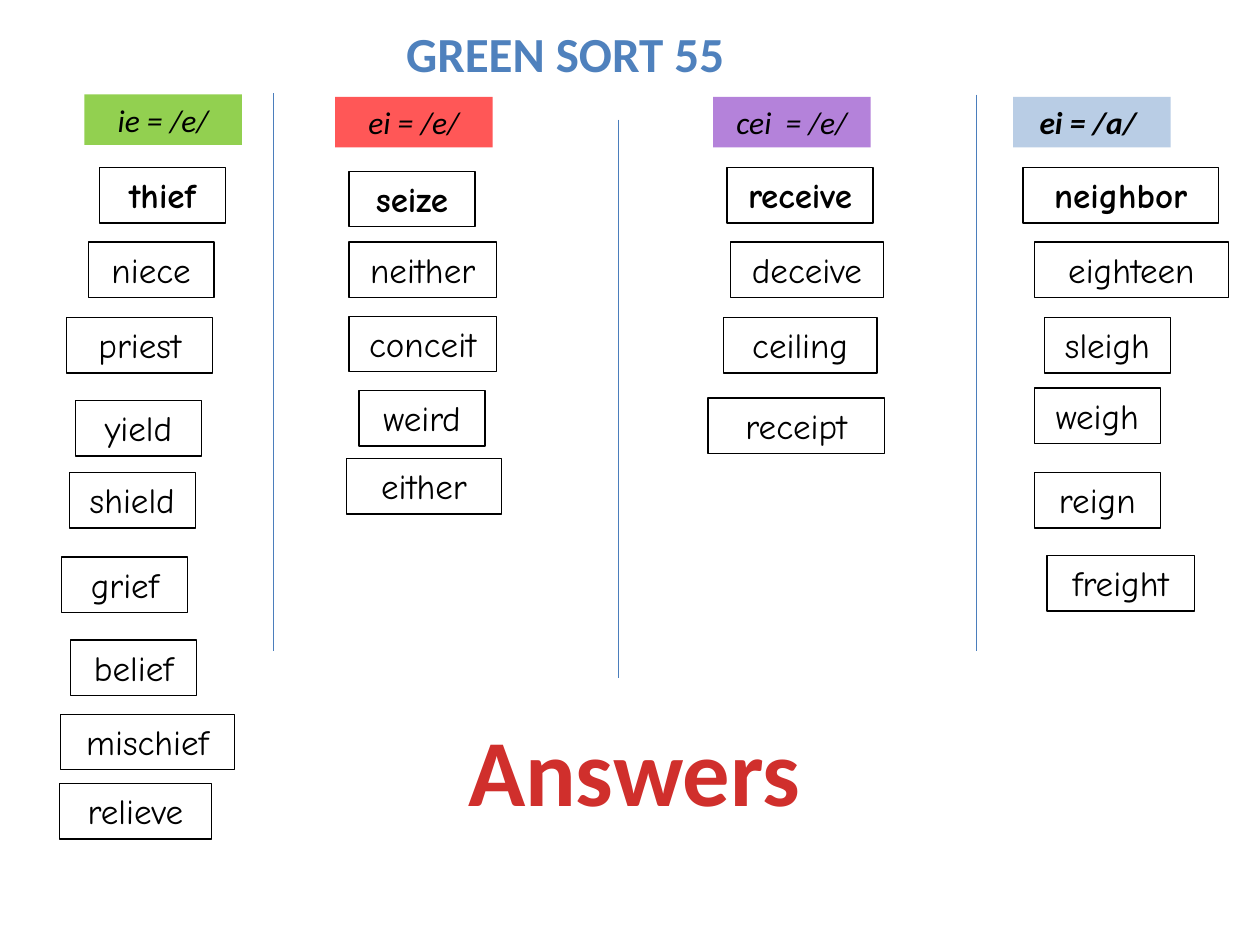
from lxml import etree
from pptx import Presentation
from pptx.dml.color import RGBColor
from pptx.enum import shapes, text
from pptx.oxml.ns import qn
from pptx.util import Inches, Pt

CARD_HEIGHT = 0.44
HEADER_SIZE = (1.25, 0.4)

# Header: label, left, top, fill; words: word, left, top, width
COLUMNS = [
    (("ie = /e/", 0.67, 0.75, "92D050"), [
        ("thief", 0.79, 1.33, 1), ("niece", 0.7, 1.92, 1),
        ("priest", 0.53, 2.52, 1.16), ("yield", 0.6, 3.18, 1),
        ("shield", 0.55, 3.75, 1), ("grief", 0.49, 4.42, 1),
        ("belief", 0.56, 5.08, 1), ("mischief", 0.48, 5.67, 1.38),
        ("relieve", 0.47, 6.22, 1.21)]),
    (("ei = /e/", 2.66, 0.77, "FF5757"), [
        ("seize", 2.77, 1.36, 1), ("neither", 2.77, 1.92, 1.17),
        ("conceit", 2.77, 2.51, 1.17), ("weird", 2.85, 3.1, 1),
        ("either", 2.75, 3.64, 1.23)]),
    (("cei  = /e/", 5.66, 0.77, "B482DA"), [
        ("receive", 5.77, 1.33, 1.16), ("deceive", 5.8, 1.92, 1.21),
        ("ceiling", 5.74, 2.52, 1.22), ("receipt", 5.62, 3.16, 1.4)]),
    (("ei = /a/", 8.04, 0.77, "B9CDE5"), [
        ("neighbor", 8.12, 1.33, 1.55), ("eighteen", 8.21, 1.92, 1.54),
        ("sleigh", 8.29, 2.52, 1), ("weigh", 8.21, 3.08, 1),
        ("reign", 8.21, 3.75, 1), ("freight", 8.31, 4.41, 1.17)]),
]
# Dividers: x, top, bottom
DIVIDERS = [(2.17, 0.74, 5.17), (4.91, 0.95, 5.38), (7.75, 0.75, 5.17)]


def color(value):
    return RGBColor.from_string(value)


def write(shape, words, font_color="000000", wrap=True, **font_format):
    """Put one centred line of formatted text in a shape."""
    frame = shape.text_frame
    frame.word_wrap = wrap
    frame.auto_size = text.MSO_AUTO_SIZE.SHAPE_TO_FIT_TEXT
    frame.vertical_anchor = text.MSO_ANCHOR.TOP
    paragraph = frame.paragraphs[0]
    paragraph.alignment = text.PP_ALIGN.CENTER
    run = paragraph.add_run()
    run.text = words
    for name, value in font_format.items():
        setattr(run.font, name, value)
    run.font.color.rgb = color(font_color)


def add_box(slide, left, top, width, height, fill=None, line=None):
    box = slide.shapes.add_shape(
        shapes.MSO_SHAPE.RECTANGLE, *map(Inches, (left, top, width, height)))
    box.shadow.inherit = False
    if fill:
        box.fill.solid()
        box.fill.fore_color.rgb = color(fill)
    else:
        box.fill.background()
    if line:
        box.line.color.rgb = color(line)
        box.line.width = Pt(0.75)
    else:
        box.line.fill.background()
    return box


def add_header(slide, label, left, top, fill, bold):
    box = add_box(slide, left, top, *HEADER_SIZE, fill=fill)
    write(box, label, name="Calibri", size=Pt(18), italic=True, bold=bold)
    if bold:  # this label is set from the left edge
        box.text_frame.margin_left = Inches(0.21)
        box.text_frame.paragraphs[0].alignment = text.PP_ALIGN.LEFT


def add_card(slide, word, left, top, width, bold):
    box = add_box(slide, left, top, width, CARD_HEIGHT, line="000000")
    write(box, word, name="Comic Neue", size=Pt(20), bold=bold)


def add_divider(slide, x, top, bottom):
    line = slide.shapes.add_connector(
        shapes.MSO_CONNECTOR.STRAIGHT, *map(Inches, (x, top, x, bottom)))
    line.line.color.rgb = color("4B7EBC")
    line.line.width = Pt(0.75)
    etree.SubElement(line._element.spPr, qn("a:effectLst"))


def add_title(slide, words):
    title = slide.shapes.title
    title.left, title.top, title.width, title.height = map(
        Inches, (2.18, 0.14, 4.61, 0.57))
    write(title, words, "4F81BD", name="Calibri", size=Pt(28), bold=True)


def add_answers(slide):
    box = slide.shapes.add_textbox(*map(Inches, (3.6, 5.6, 2.87, 1.01)))
    write(box, "Answers", "D02F2C", wrap=False,
          name="Calibri", size=Pt(54), bold=True)


def main():
    presentation = Presentation()
    presentation.slide_width = Inches(10)
    presentation.slide_height = Inches(7.5)
    slide = presentation.slides.add_slide(presentation.slide_layouts[5])

    add_title(slide, "GREEN SORT 55")
    for divider in DIVIDERS:
        add_divider(slide, *divider)

    # The first word of each column is the bold key word
    for header, words in COLUMNS:
        add_header(slide, *header, bold=header is COLUMNS[-1][0])
        for index, word in enumerate(words):
            add_card(slide, *word, bold=index == 0)

    add_answers(slide)
    presentation.save("out.pptx")


if __name__ == "__main__":
    main()
